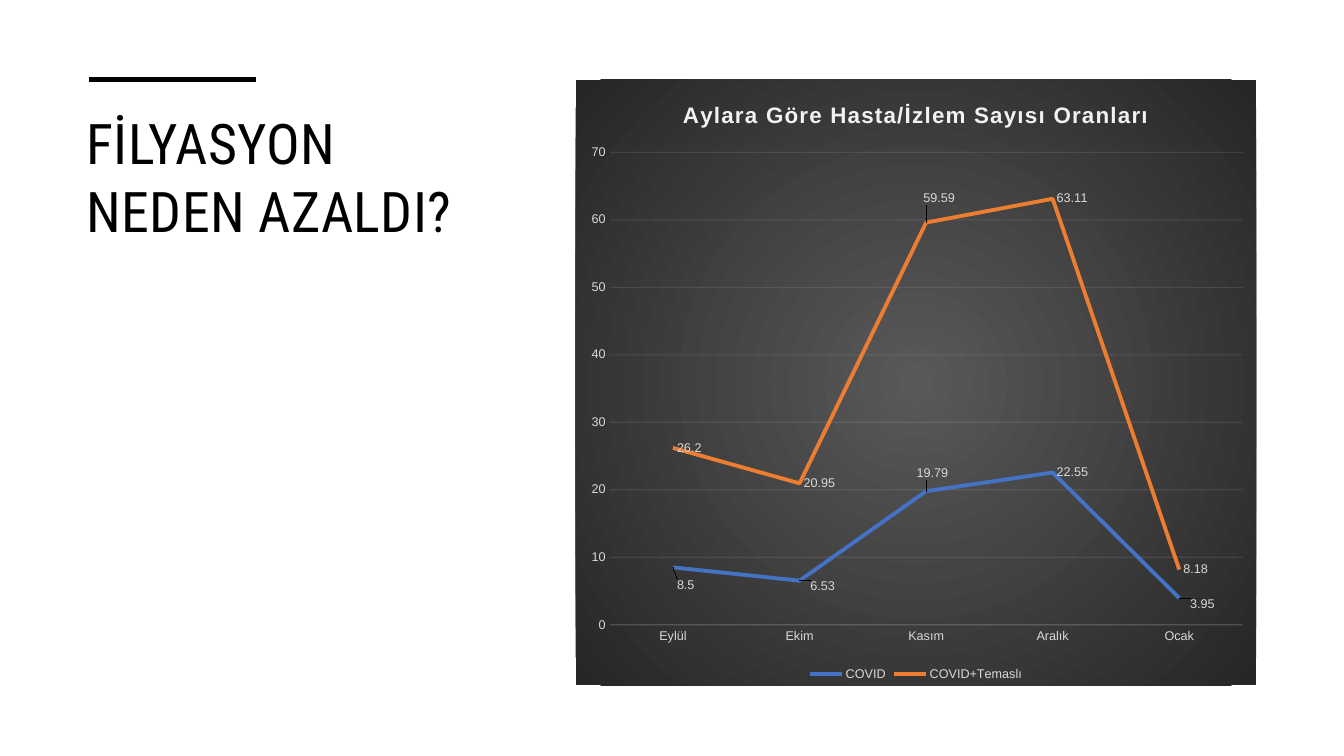
import pptx
import pptx.util
import pptx.chart.data
import pptx.dml.color
import pptx.enum.chart
import pptx.enum.shapes
import pptx.enum.text
import pptx.oxml
import pptx.oxml.ns

Inches, Pt = pptx.util.Inches, pptx.util.Pt
RGBColor = pptx.dml.color.RGBColor
qn = pptx.oxml.ns.qn
BLACK = RGBColor(0x00, 0x00, 0x00)
PALE = RGBColor(0xF2, 0xF2, 0xF2)
GREY = RGBColor(0xD9, 0xD9, 0xD9)
BLUE = RGBColor(0x44, 0x72, 0xC4)
ORANGE = RGBColor(0xED, 0x7D, 0x31)
NS = pptx.oxml.ns.nsdecls("a", "c")


def style_font(font, size, color, name="Arial", bold=False):
    font.size, font.name, font.bold = Pt(size), name, bold
    font.color.rgb = color


def manual_layout(x, y, size=""):
    return pptx.oxml.parse_xml(
        f'<c:layout {NS}><c:manualLayout>{size and "<c:layoutTarget val=%r/>" % "inner"}'
        f'{size and "<c:xMode val=%r/><c:yMode val=%r/>" % ("edge", "edge")}'
        f'<c:x val="{x}"/><c:y val="{y}"/>{size}</c:manualLayout></c:layout>')


deck = pptx.Presentation()
deck.slide_width, deck.slide_height = Inches(13.33), Inches(7.5)
slide = deck.slides.add_slide(deck.slide_layouts[6])

heading = slide.shapes.add_textbox(Inches(0.76), Inches(1.01), Inches(4.28), Inches(4.35))
heading.text_frame.word_wrap = True
heading.text_frame.vertical_anchor = pptx.enum.text.MSO_ANCHOR.TOP
heading.text_frame.text = "FİLYASYON NEDEN AZALDI?"
heading_line = heading.text_frame.paragraphs[0]
heading_line.line_spacing = 1.02
style_font(heading_line.runs[0].font, 40, BLACK, "Roboto Condensed")
heading_line.runs[0].font._element.set("spc", "30")

accent = slide.shapes.add_connector(
    pptx.enum.shapes.MSO_CONNECTOR.STRAIGHT, Inches(0.88), Inches(0.79), Inches(2.54), Inches(0.79))
accent.line.color.rgb = BLACK
accent.line.width = Pt(3.5)
accent._element.spPr.append(pptx.oxml.parse_xml(f"<a:effectLst {NS}/>"))

ratios = pptx.chart.data.CategoryChartData()
ratios.categories = ["Eylül", "Ekim", "Kasım", "Aralık", "Ocak"]
ratios.add_series("COVID", [8.5, 6.53, 19.79, 22.55, 3.95])
ratios.add_series("COVID+Temaslı", [26.2, 20.95, 59.59, 63.11, 8.18])
chart = slide.shapes.add_chart(
    pptx.enum.chart.XL_CHART_TYPE.LINE, Inches(5.71), Inches(0.79), Inches(6.75), Inches(6.01), ratios).chart
style_font(chart.font, 10, BLACK)
chart._chartSpace.find(qn("c:txPr")).addprevious(pptx.oxml.parse_xml(
    f'<c:spPr {NS}><a:gradFill><a:gsLst>'
    '<a:gs pos="0"><a:srgbClr val="595959"/></a:gs><a:gs pos="100000"><a:srgbClr val="262626"/></a:gs>'
    '</a:gsLst><a:path path="circle"><a:fillToRect l="50000" t="50000" r="50000" b="50000"/></a:path>'
    '</a:gradFill><a:ln><a:noFill/></a:ln></c:spPr>'))

chart.has_title = True
chart.chart_title.include_in_layout = False
chart.chart_title.text_frame.text = "Aylara Göre Hasta/İzlem Sayısı Oranları"
title_font = chart.chart_title.text_frame.paragraphs[0].runs[0].font
style_font(title_font, 16, PALE, bold=True)
title_font._element.set("spc", "100")

chart.has_legend = True
chart.legend.position = pptx.enum.chart.XL_LEGEND_POSITION.BOTTOM
chart.legend.include_in_layout = False
style_font(chart.legend.font, 9, GREY)

months, scale = chart.category_axis, chart.value_axis
for axis in (months, scale):
    axis.major_tick_mark = axis.minor_tick_mark = pptx.enum.chart.XL_TICK_MARK.NONE
    style_font(axis.tick_labels.font, 9, GREY)
scale.minimum_scale, scale.maximum_scale, scale.major_unit = 0, 70, 10
scale.format.line.fill.background()
for faint in (months.format.line, scale.major_gridlines.format.line):
    faint.color.rgb = PALE
    faint.width = Pt(0.75)
for axis_part in (months._element, scale.major_gridlines._xAx.find(qn("c:majorGridlines"))):
    for color in axis_part.find(qn("c:spPr")).iter(qn("a:srgbClr")):
        color.append(pptx.oxml.parse_xml(f'<a:alpha {NS} val="10000"/>'))

plot_area = chart._chartSpace.chart.plotArea
for automatic in plot_area.findall(qn("c:layout")):
    plot_area.remove(automatic)
plot_area.insert(0, manual_layout(0.05, 0.12, '<c:w val="0.93"/><c:h val="0.78"/>'))

RIGHT = pptx.enum.chart.XL_LABEL_POSITION.RIGHT
label_shifts = [
    {0: (0, 0.03), 1: (0.01, 0.01), 2: (-0.02, -0.03), 4: (0.01, 0.01)},
    {2: (-0.01, -0.04)},
]
for series, color, shifts in zip(chart.plots[0].series, (BLUE, ORANGE), label_shifts):
    series.smooth = False
    series.format.line.color.rgb = color
    series.format.line.width = Pt(2.75)
    series.marker.style = pptx.enum.chart.XL_MARKER_STYLE.NONE
    labels = series.data_labels
    labels.show_value = True
    labels.position = RIGHT
    style_font(labels.font, 9, GREY)
    for month, shift in shifts.items():
        label = series.points[month].data_label
        style_font(label.font, 9, GREY)
        label.position = RIGHT
        label._dLbl.find(qn("c:idx")).addnext(manual_layout(*shift))

deck.save("out.pptx")
